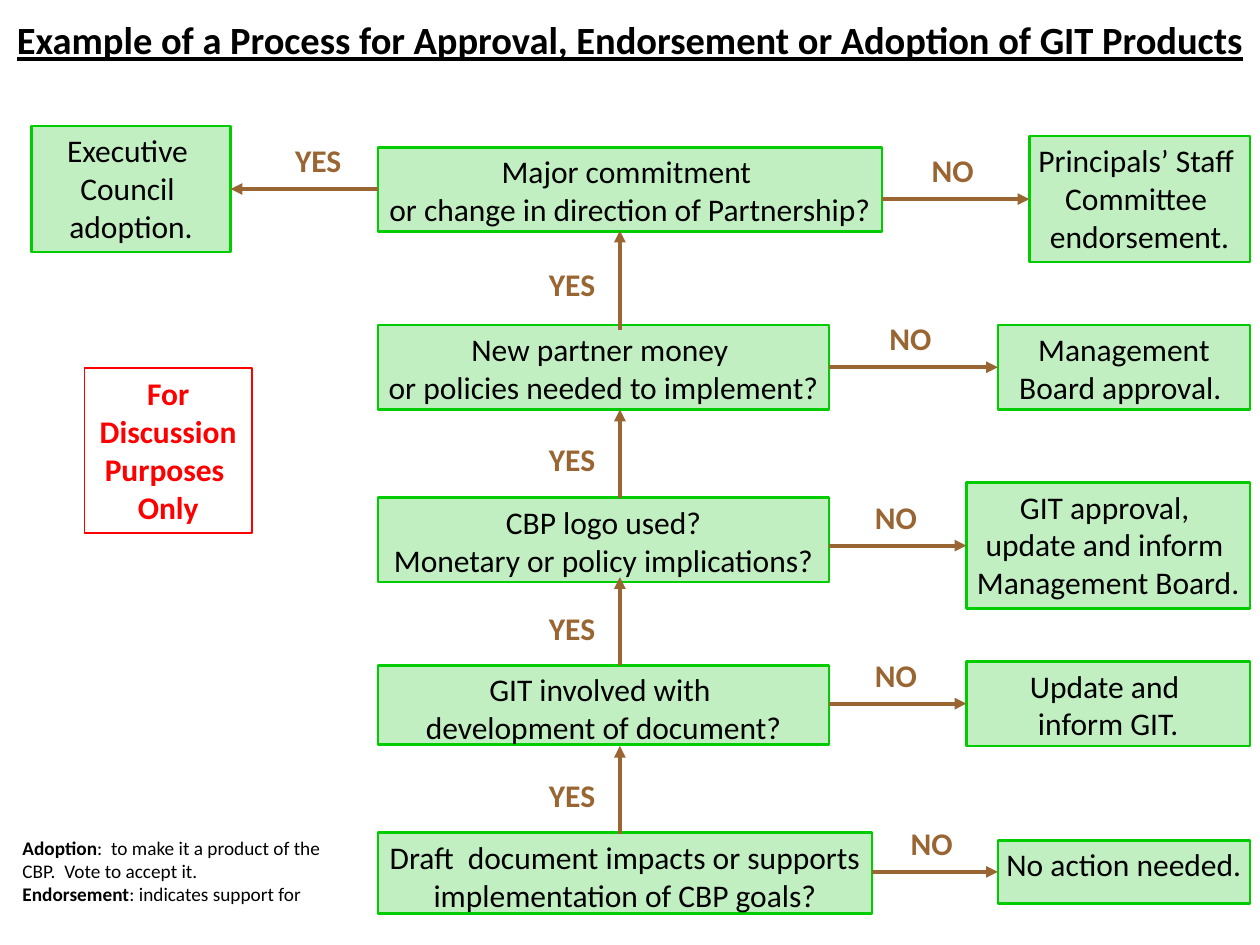
from lxml import etree
from pptx import Presentation
from pptx.dml.color import RGBColor
from pptx.enum.shapes import MSO_CONNECTOR, MSO_SHAPE
from pptx.enum.text import MSO_ANCHOR, MSO_AUTO_SIZE, PP_ALIGN
from pptx.oxml.ns import qn
from pptx.util import Inches, Pt

COLORS = {"box": "33CC33", "border": "00CC00", "arrow": "996633",
          "notice": "FF0000", "text": "000000"}
FONT = "Calibri"
BOX_OPACITY = 30
INSET = 0.04
LABEL_HEIGHT = 0.42
QUESTION_LEFT = 3
OUTCOME_RIGHT = 9.92
YES_X = 4.92
YES_LABEL_LEFT, YES_LABEL_WIDTH = 4.08, 0.92

TITLE = "Example of a Process for Approval, Endorsement or Adoption of GIT Products"

# Each step: question (lines, top, width, height), outcome (lines, top, width,
# height), "NO" label (left, width)
STEPS = [
    ((["Major commitment ", "or change in direction of Partnership?"], 1.17, 4, 0.67),
     (["Principals’ Staff ", "Committee ", "endorsement."], 1.08, 1.75, 1),
     (7.25, 0.62)),
    ((["New partner money ", "or policies needed to implement?"], 2.58, 3.58, 0.67),
     (["Management Board approval. "], 2.58, 2, 0.67),
     (6.87, 0.71)),
    ((["CBP logo used?", "Monetary or policy implications?"], 3.95, 3.58, 0.67),
     (["GIT approval, ", "update and inform ", "Management Board."], 3.83, 2.25, 1),
     (6.82, 0.58)),
    ((["GIT involved with ", "development of document?"], 5.28, 3.58, 0.63),
     (["Update and ", "inform GIT."], 5.25, 2.25, 0.67),
     (6.82, 0.58)),
    ((["Draft  document impacts or supports implementation of CBP goals?"], 6.61, 3.92, 0.64),
     (["No action needed."], 6.67, 2, 0.5),
     (7.13, 0.53)),
]
# Upward arrows: start y, end y, label top, label height
YES_ARROWS = [(2.62, 1.83, 2.06, 0.39), (3.95, 3.25, 3.45, 0.35),
              (5.28, 4.58, 4.79, 0.35), (6.62, 5.92, 6.12, 0.35)]
COUNCIL = ["Executive ", "Council ", "adoption."]
COUNCIL_AREA = (0.25, 1, 1.58, 1)
COUNCIL_LABEL = (2.13, 0.79)
NOTICE = ["For", "Discussion Purposes ", "Only"]
DEFINITIONS = [
    ("Adoption", ":  to make it a product of the CBP.  Vote to accept it."),
    ("Endorsement", ": indicates support for"),
]


def color(name):
    return RGBColor.from_string(COLORS[name])


def format_paragraph(paragraph, size, color_name="text", bold=False, align=PP_ALIGN.CENTER):
    paragraph.alignment = align
    font = paragraph.font
    font.name, font.size, font.bold = FONT, Pt(size), bold
    font.color.rgb = color(color_name)


def write_lines(shape, lines, color_name="text", bold=False, inset=INSET):
    frame = shape.text_frame
    frame.word_wrap = True
    frame.vertical_anchor = MSO_ANCHOR.TOP
    if inset is not None:
        frame.margin_left = frame.margin_right = Inches(inset)
        frame.margin_top = frame.margin_bottom = Inches(inset)
    frame.text = "\n".join(lines)
    for paragraph in frame.paragraphs:
        format_paragraph(paragraph, 18, color_name, bold)


def add_rectangle(slide, area, border, width):
    shape = slide.shapes.add_shape(MSO_SHAPE.RECTANGLE, *map(Inches, area))
    shape.shadow.inherit = False
    shape.fill.background()
    shape.line.color.rgb = color(border)
    shape.line.width = Pt(width)
    return shape


def add_box(slide, lines, *area):
    shape = add_rectangle(slide, area, "border", 1.5)
    shape.fill.solid()
    shape.fill.fore_color.rgb = color("box")
    fill_color = shape.fill._xPr.find(qn("a:solidFill"))[0]
    etree.SubElement(fill_color, qn("a:alpha"), val=str(BOX_OPACITY * 1000))
    write_lines(shape, lines)


def add_arrow(slide, *ends):
    arrow = slide.shapes.add_connector(MSO_CONNECTOR.STRAIGHT, *map(Inches, ends))
    arrow.line.color.rgb = color("arrow")
    arrow.line.width = Pt(2.25)
    etree.SubElement(arrow.line._get_or_add_ln(), qn("a:tailEnd"), type="triangle")
    etree.SubElement(arrow._element.spPr, qn("a:effectLst"))


def add_label(slide, text, *area):
    label = slide.shapes.add_textbox(*map(Inches, area))
    write_lines(label, [text], "arrow", bold=True)


def add_title(slide):
    title = slide.shapes.title
    title.left, title.top, title.width, title.height = map(Inches, (0, 0.08, 10, 0.47))
    frame = title.text_frame
    frame.text = TITLE
    frame.auto_size = MSO_AUTO_SIZE.NONE
    frame.vertical_anchor = MSO_ANCHOR.TOP
    format_paragraph(frame.paragraphs[0], 22, bold=True)
    frame.paragraphs[0].font.underline = True


def add_flow(slide):
    for question, outcome, (label_left, label_width) in STEPS:
        lines, top, width, height = question
        add_box(slide, lines, QUESTION_LEFT, top, width, height)
        question_right = QUESTION_LEFT + width

        lines, top, width, height = outcome
        outcome_left = OUTCOME_RIGHT - width
        add_box(slide, lines, outcome_left, top, width, height)

        middle = top + height / 2
        add_arrow(slide, question_right, middle, outcome_left, middle)
        add_label(slide, "NO", label_left, middle - LABEL_HEIGHT, label_width, LABEL_HEIGHT)

    for start, end, label_top, label_height in YES_ARROWS:
        add_arrow(slide, YES_X, start, YES_X, end)
        add_label(slide, "YES", YES_LABEL_LEFT, label_top, YES_LABEL_WIDTH, label_height)


def add_council(slide):
    left, top, width, height = COUNCIL_AREA
    add_box(slide, COUNCIL, *COUNCIL_AREA)
    middle = top + height / 2
    add_arrow(slide, QUESTION_LEFT, middle, left + width, middle)
    label_left, label_width = COUNCIL_LABEL
    add_label(slide, "YES", label_left, middle - LABEL_HEIGHT, label_width, LABEL_HEIGHT)


def add_definitions(slide):
    box = slide.shapes.add_textbox(*map(Inches, (0.08, 6.59, 2.67, 0.66)))
    frame = box.text_frame
    frame.word_wrap = True
    for index, (term, meaning) in enumerate(DEFINITIONS):
        paragraph = frame.add_paragraph() if index else frame.paragraphs[0]
        format_paragraph(paragraph, 11, align=PP_ALIGN.LEFT)
        for text, bold in ((term, True), (meaning, False)):
            run = paragraph.add_run()
            run.text = text
            run.font.bold = bold


def main():
    presentation = Presentation()
    presentation.slide_width, presentation.slide_height = Inches(10), Inches(7.5)
    slide = presentation.slides.add_slide(presentation.slide_layouts[5])
    add_title(slide)
    add_flow(slide)
    add_council(slide)
    notice = add_rectangle(slide, (0.67, 2.92, 1.33, 1.31), "notice", 0.75)
    write_lines(notice, NOTICE, "notice", bold=True, inset=None)
    add_definitions(slide)
    presentation.save("out.pptx")


if __name__ == "__main__":
    main()
